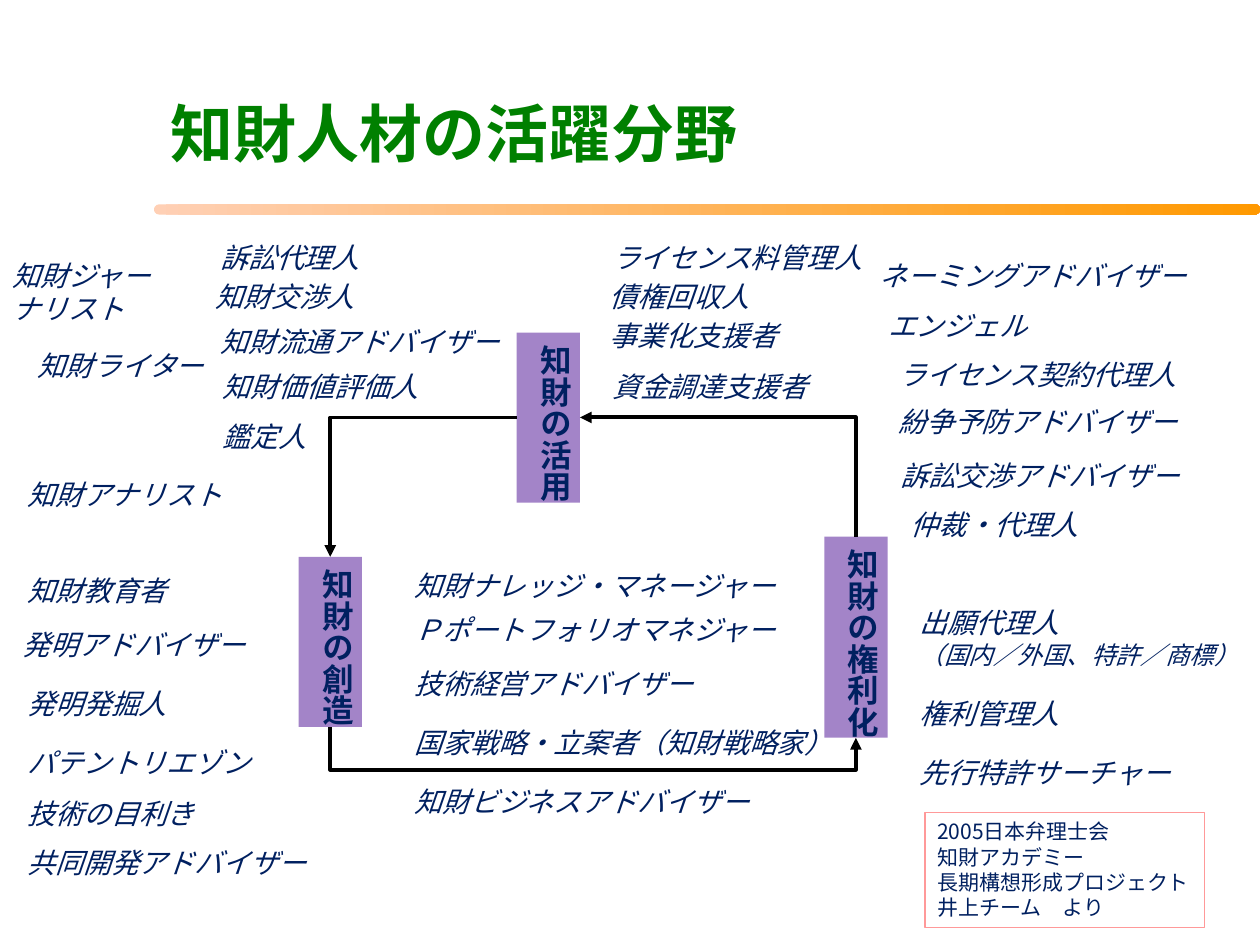
from lxml import etree
from pptx import Presentation
from pptx.dml.color import RGBColor
from pptx.enum.shapes import MSO_CONNECTOR, MSO_SHAPE
from pptx.enum.text import MSO_ANCHOR, MSO_AUTO_SIZE, PP_ALIGN
from pptx.oxml.ns import qn
from pptx.util import Pt

FONT = "Noto Sans CJK JP"
NAVY = RGBColor(0x00, 0x20, 0x60)
GREEN = RGBColor(0x00, 0x80, 0x00)
PURPLE = RGBColor(0xA3, 0x84, 0xC8)
PEACH = RGBColor(0xFF, 0xD0, 0xB5)
ORANGE = RGBColor(0xFF, 0x99, 0x00)
PINK = RGBColor(0xFF, 0x99, 0x99)
BLACK = RGBColor(0x00, 0x00, 0x00)
RECTANGLE, ROUNDED = MSO_SHAPE.RECTANGLE, MSO_SHAPE.ROUNDED_RECTANGLE
ELBOW = MSO_CONNECTOR.ELBOW
LEFT, TOP = PP_ALIGN.LEFT, MSO_ANCHOR.TOP
GROW = MSO_AUTO_SIZE.SHAPE_TO_FIT_TEXT
TOP_SIDE, LEFT_SIDE, BOTTOM_SIDE, RIGHT_SIDE = range(4)


def write(shape, text, sizes=(16,), color=NAVY, bold=False, italic=False, wrap=False):
    """Fill a shape with one paragraph per line; the last size serves all further lines."""
    frame = shape.text_frame
    frame.word_wrap = wrap
    frame.auto_size = GROW
    frame.vertical_anchor = TOP
    frame.text = text
    for index, paragraph in enumerate(frame.paragraphs):
        paragraph.alignment = LEFT
        for run in paragraph.runs:
            font = run.font
            font.name = FONT
            font.size = Pt(sizes[min(index, len(sizes) - 1)])
            font.bold, font.italic = bold, italic
            font.color.rgb = color
            east_asian = etree.Element(qn("a:ea"), typeface=FONT)
            run._r.rPr.find(qn("a:latin")).addnext(east_asian)


presentation = Presentation()
presentation.slide_width, presentation.slide_height = Pt(720), Pt(540)
slide = presentation.slides.add_slide(presentation.slide_layouts[5])
shapes = slide.shapes

# Title and the bar below it
title = shapes.title
title.left, title.top, title.width, title.height = Pt(90), Pt(50.4), Pt(342.7), Pt(51.1)
write(title, "知財人材の活躍分野", sizes=(36,), color=GREEN, bold=True)

bar = shapes.add_shape(ROUNDED, Pt(88), Pt(116.8), Pt(632), Pt(5.8))
bar.shadow.inherit = False
bar.adjustments[0] = 0.5
bar.line.fill.background()
bar.fill.gradient()
bar.fill.gradient_angle = 0
for stop, color in zip(bar.fill.gradient_stops, (PEACH, ORANGE)):
    stop.color.rgb = color

# The three stages of the cycle: left, top, height
stages = {}
for name, left, top, height in (
    ("知財の創造", 170.6, 318.2, 97.2),
    ("知財の権利化", 471, 306.7, 114.8),
    ("知財の活用", 295.2, 190, 97.2),
):
    stage = shapes.add_shape(RECTANGLE, Pt(left), Pt(top), Pt(36.2), Pt(height))
    stage.shadow.inherit = False
    stage.fill.solid()
    stage.fill.fore_color.rgb = PURPLE
    stage.line.fill.background()
    write(stage, name, sizes=(18,), bold=True)
    stage.text_frame._txBody.bodyPr.set("vert", "eaVert")
    stages[name] = stage

# Arrows: ends, unrotated frame, rotation, flip, preset, bend
for start, start_side, end, end_side, frame, rotation, flip, preset, bend in (
    ("知財の創造", BOTTOM_SIDE, "知財の権利化", BOTTOM_SIDE,
     (335.8, 268.4, 6.1, 300.4), 270, "flipH", "bentConnector3", 3.98),
    ("知財の権利化", TOP_SIDE, "知財の活用", RIGHT_SIDE,
     (376.2, 193.8, 68.1, 157.7), 270, "flipV", "bentConnector2", None),
    ("知財の活用", LEFT_SIDE, "知財の創造", TOP_SIDE,
     (188.7, 238.6, 106.5, 79.6), 180, "flipV", "bentConnector2", None),
):
    arrow = shapes.add_connector(ELBOW, 0, 0, 0, 0)
    arrow.begin_connect(stages[start], start_side)
    arrow.end_connect(stages[end], end_side)
    arrow.left, arrow.top, arrow.width, arrow.height = map(Pt, frame)
    properties = arrow._element.spPr
    transform = properties.find(qn("a:xfrm"))
    for name in ("flipH", "flipV"):
        transform.set(name, "1" if name == flip else "0")
    transform.set("rot", str(rotation * 60000))
    geometry = properties.find(qn("a:prstGeom"))
    geometry.set("prst", preset)
    if bend:
        guides = geometry.find(qn("a:avLst"))
        etree.SubElement(guides, qn("a:gd"), name="adj1", fmla=f"val {round(bend * 100000)}")
    arrow.line.color.rgb = BLACK
    arrow.line.width = Pt(2.25)
    etree.SubElement(arrow.line._get_or_add_ln(), qn("a:tailEnd"), type="triangle")
    etree.SubElement(properties, qn("a:effectLst"))

# Professions around the cycle: left, top, text
professions = (
    (14.4, 195.8, "知財ライター"),
    (8.6, 269.3, "知財アナリスト"),
    (8.6, 324, "知財教育者"),
    (5.8, 355, "発明アドバイザー"),
    (8.6, 388.8, "発明発掘人"),
    (8.6, 422.6, "パテントリエゾン"),
    (8.6, 451.4, "技術の目利き"),
    (8.6, 479.5, "共同開発アドバイザー"),
    (118.8, 133.9, "訴訟代理人"),
    (116, 156.3, "知財交渉人"),
    (118.8, 182.2, "知財流通アドバイザー"),
    (120.3, 207.4, "知財価値評価人"),
    (120.3, 236.2, "鑑定人"),
    (342.7, 133.9, "ライセンス料管理人"),
    (341.3, 156.3, "債権回収人"),
    (341.3, 178.6, "事業化支援者"),
    (342.7, 207.4, "資金調達支援者"),
    (495.4, 144, "ネーミングアドバイザー"),
    (500.4, 172.8, "エンジェル"),
    (506.2, 200.9, "ライセンス契約代理人"),
    (506.2, 227.5, "紛争予防アドバイザー"),
    (507.6, 258.5, "訴訟交渉アドバイザー"),
    (513.4, 286.6, "仲裁・代理人"),
    (518.4, 394.6, "権利管理人"),
    (518.4, 428.4, "先行特許サーチャー"),
    (229.7, 321.1, "知財ナレッジ・マネージャー"),
    (229.7, 346.3, "Ｐポートフォリオマネジャー"),
    (229.7, 377.3, "技術経営アドバイザー"),
    (229.7, 411.1, "国家戦略・立案者（知財戦略家）"),
    (229.7, 445, "知財ビジネスアドバイザー"),
)
for left, top, text in professions:
    width = 16 * len(text) + 14.4  # full-width letters plus both insets
    label = shapes.add_textbox(Pt(left), Pt(top), Pt(width), Pt(26.6))
    write(label, text, italic=True)

journalist = shapes.add_textbox(Pt(0), Pt(144), Pt(106.6), Pt(46.1))
write(journalist, "知財ジャーナリスト", italic=True, wrap=True)

agent = shapes.add_textbox(Pt(518.4), Pt(342.7), Pt(198), Pt(43.9))
write(agent, "出願代理人\n（国内／外国、特許／商標）", sizes=(16, 14), italic=True)

# Source note
source = shapes.add_textbox(Pt(528.5), Pt(464.4), Pt(159.8), Pt(65.5))
source.line.color.rgb = PINK
source.line.width = Pt(0.75)
write(source, "2005日本弁理士会\n知財アカデミー\n長期構想形成プロジェクト\n井上チーム　より", sizes=(12,))

presentation.save("out.pptx")
